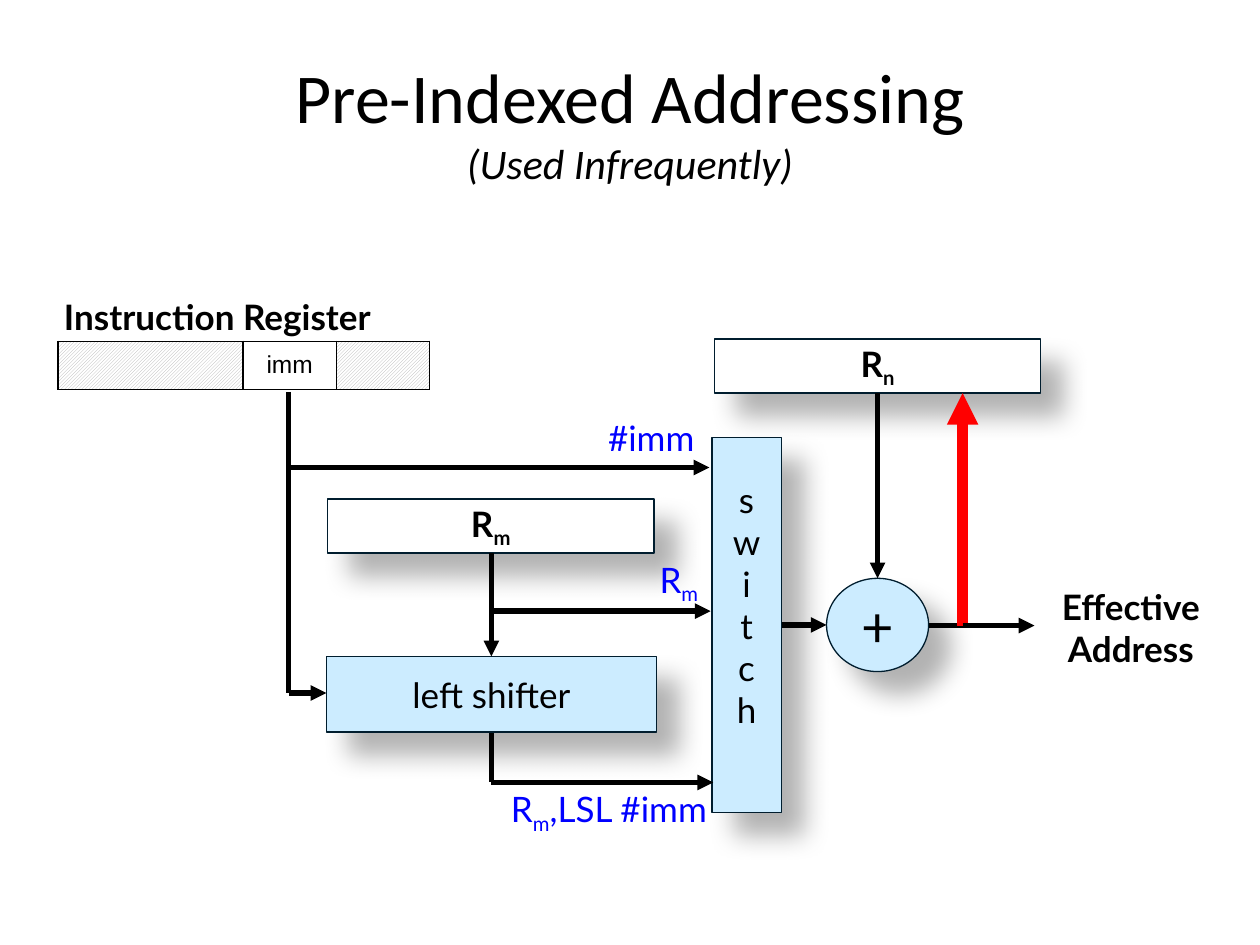
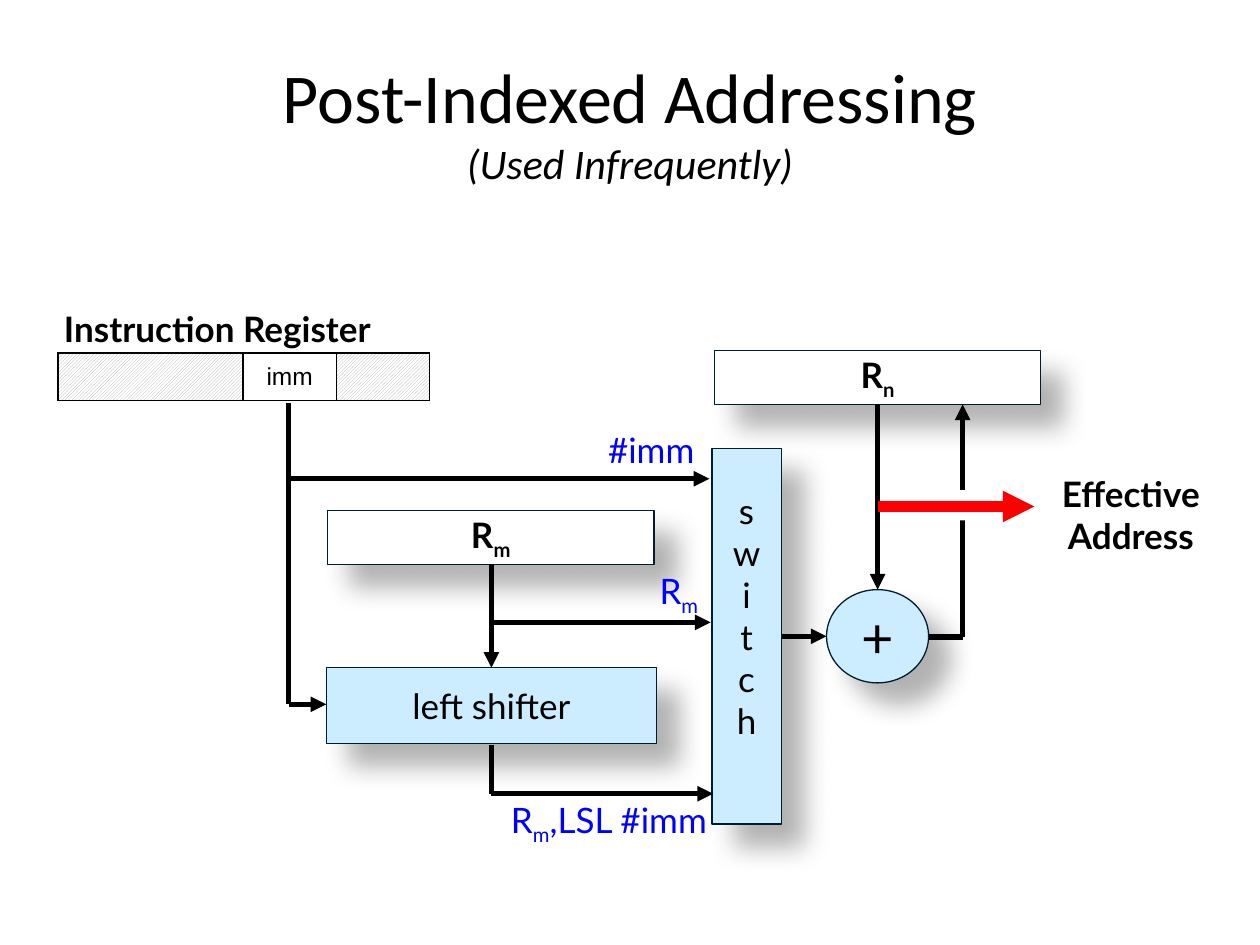
from copy import deepcopy
from dataclasses import dataclass

from lxml.etree import SubElement
from pptx import Presentation
from pptx.dml.color import RGBColor
from pptx.enum.dml import MSO_PATTERN
from pptx.enum.shapes import MSO_CONNECTOR, MSO_SHAPE
from pptx.enum.text import MSO_ANCHOR, MSO_AUTO_SIZE, PP_ALIGN
from pptx.oxml.ns import qn
from pptx.util import Inches, Pt

COLORS = {
    "ink": "000000",
    "paper": "FFFFFF",
    "outline": "001D2E",
    "unit": "CCECFF",
    "signal": "0000FF",
    "accent": "FF0000",
    "hatch": "B2B2B2",
}
COLUMNS, ROWS = 100, 75  # square grid over the whole slide
CELL = Inches(0.1)
TITLE_FONT, LABEL_FONT, FIELD_FONT = "Calibri", "Lato", "Arial"


@dataclass
class Region:
    """A part of the slide grid; positions inside count from its corner."""
    slide: object
    column: float
    row: float

    def point(self, column, row):
        return (round((self.column + column) * CELL),
                round((self.row + row) * CELL))

    def frame(self, column, row, width, height):
        return *self.point(column, row), round(width * CELL), round(height * CELL)


def rgb(name):
    return RGBColor.from_string(COLORS[name])


def style_run(run, size, font=LABEL_FONT, color="ink", bold=False, italic=False):
    run.font.size = Pt(size)
    run.font.name = font
    run.font.color.rgb = rgb(color)
    run.font.bold = bold
    run.font.italic = italic


def write(paragraph, parts, align=PP_ALIGN.CENTER, size=20, **style):
    """Write the parts in turn; every second one is a subscript."""
    paragraph.alignment = align
    for index, part in enumerate(parts):
        first_new = len(paragraph.runs)
        for line_number, line in enumerate(part.split("\n")):
            if line_number:
                paragraph.add_line_break()
            paragraph.add_run().text = line
        for run in paragraph.runs[first_new:]:
            style_run(run, size, **style)
            if index % 2:
                run._r.get_or_add_rPr().set("baseline", "-25000")


# Building blocks
def add_label(region, box, parts, align=PP_ALIGN.RIGHT, **style):
    text_frame = region.slide.shapes.add_textbox(*region.frame(*box)).text_frame
    text_frame.word_wrap = True
    write(text_frame.paragraphs[0], parts, align, **style)


def add_shadow(shape):
    shape.shadow.inherit = False
    effects = shape._element.spPr.find(qn("a:effectLst"))
    shadow = SubElement(effects, qn("a:outerShdw"), blurRad=str(Pt(15)),
                        dist=str(Pt(18)), dir="2700000", algn="ctr", rotWithShape="0")
    color = SubElement(shadow, qn("a:srgbClr"), val=COLORS["ink"])
    SubElement(color, qn("a:alpha"), val="30000")


def add_block(region, box, lines, fill="unit", kind=MSO_SHAPE.RECTANGLE, **style):
    """Add a shadowed block; lines holds the parts of each paragraph."""
    shape = region.slide.shapes.add_shape(kind, *region.frame(*box))
    add_shadow(shape)
    shape.fill.solid()
    shape.fill.fore_color.rgb = rgb(fill)
    shape.line.color.rgb = rgb("outline")
    shape.line.width = Pt(0.75)
    text_frame = shape.text_frame
    text_frame.word_wrap = False
    text_frame.vertical_anchor = MSO_ANCHOR.MIDDLE
    for index, parts in enumerate(lines):
        paragraph = text_frame.add_paragraph() if index else text_frame.paragraphs[0]
        write(paragraph, parts, **style)
    return shape


def add_wire(region, start, end, arrow=True, color="ink", width=3):
    wire = region.slide.shapes.add_connector(
        MSO_CONNECTOR.STRAIGHT, *region.point(*start), *region.point(*end))
    wire.line.color.rgb = rgb(color)
    wire.line.width = Pt(width)
    if arrow:
        SubElement(wire.line._get_or_add_ln(), qn("a:tailEnd"), type="triangle")
    SubElement(wire._element.spPr, qn("a:effectLst"))


def add_cell_borders(cell):
    properties = cell._tc.get_or_add_tcPr()
    for index, side in enumerate(("lnL", "lnR", "lnT", "lnB")):
        border = SubElement(properties, qn(f"a:{side}"), w=str(Pt(1)))
        fill = SubElement(border, qn("a:solidFill"))
        SubElement(fill, qn("a:srgbClr"), val=COLORS["ink"])
        properties.insert(index, border)


# Title shared by both slides
def add_title(slide, name):
    title = slide.shapes.title
    title.left, title.top, title.width, title.height = Region(
        slide, 0, 0).frame(7.5, 3.3, COLUMNS - 15, 12.5)
    text_frame = title.text_frame
    text_frame.text = f"{name}\v(Used Infrequently)"
    text_frame.auto_size = MSO_AUTO_SIZE.NONE
    text_frame.vertical_anchor = MSO_ANCHOR.MIDDLE
    paragraph = text_frame.paragraphs[0]
    paragraph.alignment = PP_ALIGN.CENTER
    heading, remark = paragraph.runs
    style_run(heading, 40, TITLE_FONT)
    style_run(remark, 24, TITLE_FONT, italic=True)
    line_break = paragraph._p.find(qn("a:br"))
    line_break.append(deepcopy(heading._r.rPr))


# Instruction register with its immediate field
def add_instruction_register(region):
    add_label(region, (0.1, 0, 31.4, 4.3), ["Instruction Register"],
              PP_ALIGN.LEFT, bold=True)
    widths = (14.7, 7.4, 7.4)
    table = region.slide.shapes.add_table(
        1, len(widths), *region.frame(0.6, 4.1, sum(widths), 3.8)).table
    table.first_row = table.horz_banding = False
    for index, width in enumerate(widths):
        table.columns[index].width = round(width * CELL)
        cell = table.cell(0, index)
        cell.vertical_anchor = MSO_ANCHOR.MIDDLE
        cell.margin_top = cell.margin_bottom = 0
        if index == 1:
            cell.fill.solid()
            cell.fill.fore_color.rgb = rgb("paper")
            write(cell.text_frame.paragraphs[0], ["imm"], size=14, font=FIELD_FONT)
        else:
            cell.fill.patterned()
            cell.fill.pattern = MSO_PATTERN.DARK_UPWARD_DIAGONAL
            cell.fill.fore_color.rgb = rgb("hatch")
            cell.fill.back_color.rgb = rgb("paper")
        add_cell_borders(cell)


# Registers, shifter, switch and adder
def add_units(region):
    for box, index_name in (((52.7, 3.9, 25.9, 4.3), "n"),
                            ((22, 16.6, 25.9, 4.3), "m")):
        add_block(region, box, [["R", index_name]], fill="paper", bold=True)
    add_block(region, (21.9, 29.1, 26.2, 6), [["left shifter"]])
    add_block(region, (61.6, 22.9, 8.1, 7.4), [["+"]], kind=MSO_SHAPE.OVAL, size=32)
    switch = add_block(region, (52.5, 11.7, 5.5, 29.8), [[letter] for letter in "switch"])
    switch.text_frame.margin_bottom = Inches(0.38)


# Wires between the units, with the signal names
def add_operand_wires(region):
    imm, rm, rn, switch = 18.9, 35, 65.65, 52.5
    add_wire(region, (imm, 8.1), (imm, 32), arrow=False)
    add_wire(region, (imm, 32), (21.9, 32))
    add_wire(region, (imm, 14.1), (switch - 0.2, 14.1))
    add_wire(region, (rm, 20.9), (rm, 29.1))
    add_wire(region, (rm, 25.5), (switch - 0.1, 25.5))
    add_wire(region, (rm, 35.2), (rm, 39.1), arrow=False)
    add_wire(region, (rm, 39.1), (switch + 0.1, 39.1))
    add_wire(region, (switch + 5.6, 26.6), (61.6, 26.6))
    add_wire(region, (rn, 8.2), (rn, 22.9))
    for box, parts in (((33, 9.6, 19.1, 4.3), ["#imm"]),
                       ((33.3, 20.8, 19.1, 4.3), ["R", "m"]),
                       ((30.8, 39, 22.3, 4.3), ["R", "m", ",LSL #imm"])):
        add_label(region, box, parts, color="signal")


# Write-back to Rn and the effective address
def add_result_wires(region, pre_indexed):
    write_back, adder_row, base, end = 72.4, 26.65, 65.7, 78.1
    accent = {"color": "accent", "width": 6}
    add_wire(region, (69.7, adder_row), (write_back, adder_row), arrow=False)
    add_wire(region, (write_back, adder_row), (write_back, 8.2),
             **(accent if pre_indexed else {}))
    if pre_indexed:
        add_wire(region, (write_back, adder_row), (end, adder_row))
    else:
        gap = region.slide.shapes.add_shape(
            MSO_SHAPE.RECTANGLE, *region.frame(71.3, 15, 2.2, 2.4))
        gap.shadow.inherit = False
        gap.fill.solid()
        gap.fill.fore_color.rgb = rgb("paper")
        gap.line.fill.background()
        add_wire(region, (base, 16.3), (end, 16.3), **accent)
    add_label(region, (77.5, 23 if pre_indexed else 13.1, 16.5, 7.7),
              ["Effective\nAddress"], PP_ALIGN.CENTER, bold=True)


def add_addressing_slide(presentation, name, diagram_row, pre_indexed):
    slide = presentation.slides.add_slide(presentation.slide_layouts[5])
    add_title(slide, name)
    diagram = Region(slide, 4, diagram_row)
    add_instruction_register(diagram)
    add_units(diagram)
    add_operand_wires(diagram)
    add_result_wires(diagram, pre_indexed)


def main():
    presentation = Presentation()
    presentation.slide_width = COLUMNS * CELL
    presentation.slide_height = ROWS * CELL
    add_addressing_slide(presentation, "Pre-Indexed Addressing", 23, pre_indexed=True)
    add_addressing_slide(presentation, "Post-Indexed Addressing", 23.9, pre_indexed=False)
    presentation.save("out.pptx")


if __name__ == "__main__":
    main()
